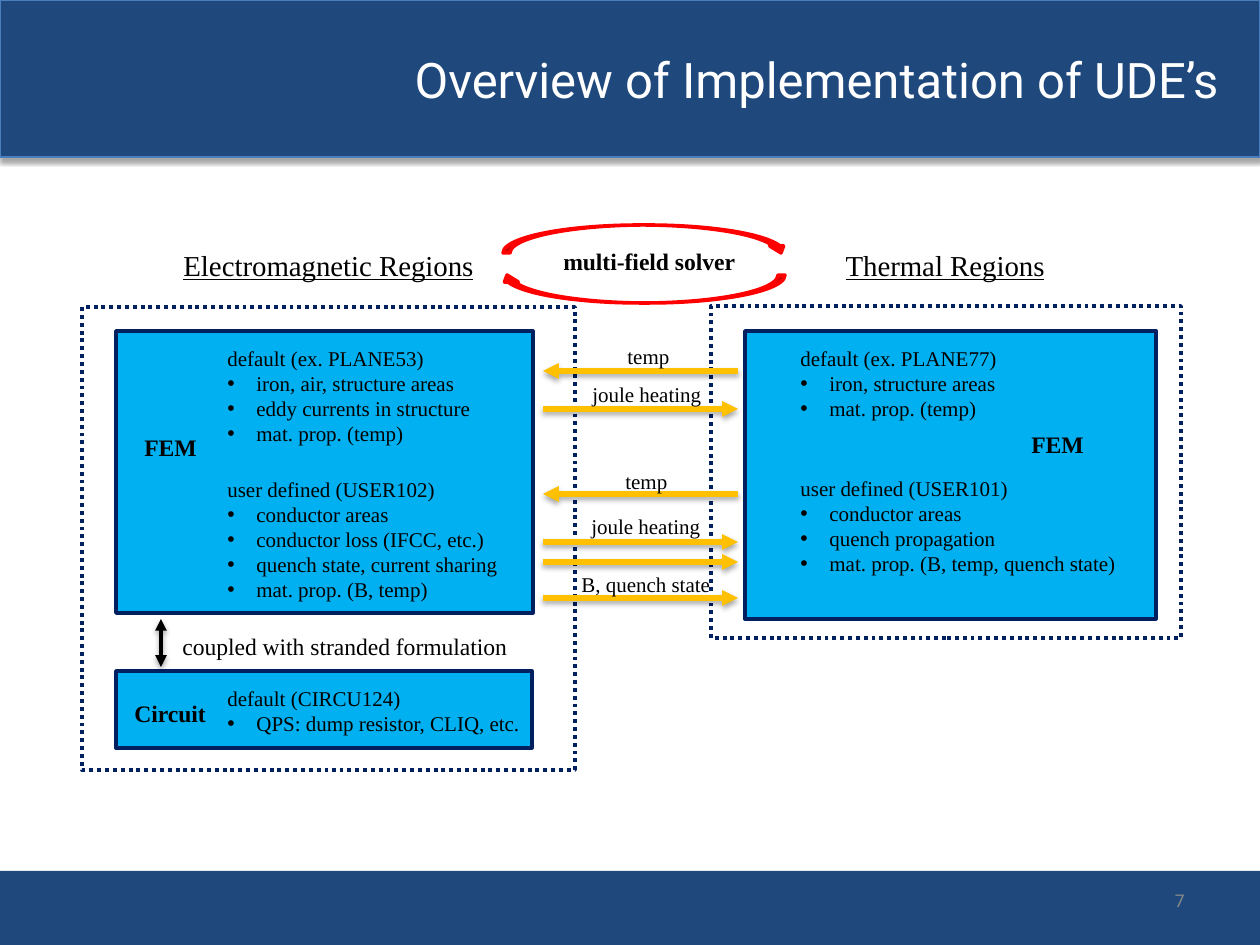
from dataclasses import dataclass

from lxml.etree import SubElement
from pptx import Presentation
from pptx.dml.color import RGBColor
from pptx.enum.dml import MSO_LINE
from pptx.enum.shapes import MSO_CONNECTOR, MSO_SHAPE
from pptx.enum.text import MSO_ANCHOR, PP_ALIGN
from pptx.oxml.ns import qn
from pptx.util import Emu, Pt


@dataclass(frozen=True)
class Theme:
    bar: str = "1F497D"
    bar_line: str = "4B7EBC"
    box: str = "00B0F0"
    frame: str = "002060"
    loop: str = "FF0000"
    flow: str = "FFC000"
    ink: str = "000000"
    white: str = "FFFFFF"
    muted: str = "898989"
    head_font: str = "Roboto"
    body_font: str = "Times New Roman"
    title: float = 28
    heading: float = 16.5
    label: float = 13.5
    body: float = 12
    number: float = 10


T = Theme()


def px(n):
    return Emu(round(n * 914400 / 126))


def rgb(color):
    return RGBColor.from_string(color)


def fill_shadow(effects):
    shadow = SubElement(effects, qn("a:outerShdw"), blurRad=str(Pt(3.1)),
                        dist=str(Pt(1.8)), dir="5400000", rotWithShape="0")
    color = SubElement(shadow, qn("a:srgbClr"), val=T.ink)
    SubElement(color, qn("a:alpha"), val="35000")


def add_shape(s, kind, box, fill=None, line=None, width=2, dash=None, shadow=False):
    sp = s.shapes.add_shape(kind, *map(px, box))
    sp.shadow.inherit = False
    if fill:
        sp.fill.solid()
        sp.fill.fore_color.rgb = rgb(fill)
    else:
        sp.fill.background()
    if line:
        sp.line.color.rgb = rgb(line)
        sp.line.width = Pt(width)
    else:
        sp.line.fill.background()
    if dash:
        sp.line.dash_style = dash
    if shadow:
        fill_shadow(sp._element.spPr.find(qn("a:effectLst")))
    return sp


def add_arrow(s, start, end, color, width, both=False):
    line = s.shapes.add_connector(MSO_CONNECTOR.STRAIGHT, *map(px, start + end))
    line.line.color.rgb = rgb(color)
    line.line.width = Pt(width)
    ln = line.line._get_or_add_ln()
    for tag in ("a:headEnd", "a:tailEnd") if both else ("a:tailEnd",):
        SubElement(ln, qn(tag), type="triangle")
    fill_shadow(SubElement(line._element.spPr, qn("a:effectLst")))


def add_bullet(p):
    pPr = p._p.get_or_add_pPr()
    pPr.set("marL", str(px(29)))
    pPr.set("indent", str(-px(29)))
    SubElement(pPr, qn("a:buFont"), typeface="Arial")
    SubElement(pPr, qn("a:buChar"), char="•")


def add_text(s, box, lines, size, color=T.ink, font=T.body_font, align=PP_ALIGN.LEFT,
             anchor=MSO_ANCHOR.TOP, wrap=False, bold=False, underline=False):
    tf = s.shapes.add_textbox(*map(px, box)).text_frame
    tf.word_wrap = wrap
    tf.vertical_anchor = anchor
    tf.text = "\n".join(lines)
    for i, p in enumerate(tf.paragraphs):
        p.alignment = align
        if i:
            add_bullet(p)
        for r in p.runs:
            r.font.size = Pt(size)
            r.font.name = font
            r.font.color.rgb = rgb(color)
            if bold:
                r.font.bold = True
            if underline:
                r.font.underline = True
    return tf


def add_heading(s, box, text):
    add_text(s, box, [text], T.heading, align=PP_ALIGN.CENTER, wrap=True, underline=True)


def add_label(s, box, text, bold=True):
    add_text(s, box, [text], T.label, bold=bold)


def add_block(s, box):
    add_shape(s, MSO_SHAPE.RECTANGLE, box, T.box, T.frame)


def add_frame(s, box):
    add_shape(s, MSO_SHAPE.RECTANGLE, box, None, T.frame, 2.25, MSO_LINE.ROUND_DOT)


def add_bars(s):
    add_shape(s, MSO_SHAPE.RECTANGLE, (0, 871, 1262, 76), T.bar)
    add_shape(s, MSO_SHAPE.RECTANGLE, (0, 0, 1260, 157), T.bar, T.bar_line, 0.75, shadow=True)
    tf = add_text(s, (373, 0, 887, 157), ["Overview of Implementation of UDE’s"], T.title,
                  T.white, T.head_font, PP_ALIGN.CENTER, MSO_ANCHOR.MIDDLE, True)
    fill = tf.paragraphs[0].runs[0]._r.rPr.find(qn("a:solidFill"))
    effects = SubElement(fill.getparent(), qn("a:effectLst"))
    fill.addnext(effects)
    fill_shadow(effects)
    add_text(s, (1125, 876, 72, 50), ["7"], T.number, T.muted, T.head_font,
             PP_ALIGN.RIGHT, MSO_ANCHOR.MIDDLE, True)


def add_electromagnetic(s):
    add_heading(s, (82, 241, 493, 48), "Electromagnetic Regions")
    add_block(s, (116, 331, 417, 282))
    add_text(s, (215, 339, 272, 115), [
        "default (ex. PLANE53)", "iron, air, structure areas",
        "eddy currents in structure", "mat. prop. (temp)"], T.body)
    add_text(s, (215, 470, 300, 140), [
        "user defined (USER102)", "conductor areas", "conductor loss (IFCC, etc.)",
        "quench state, current sharing", "mat. prop. (B, temp)"], T.body)
    add_label(s, (132, 427, 78, 42), "FEM")
    add_block(s, (116, 671, 416, 77))
    add_text(s, (215, 679, 321, 63),
             ["default (CIRCU124)", "QPS: dump resistor, CLIQ, etc."], T.body)
    add_label(s, (122, 693, 98, 42), "Circuit")
    add_arrow(s, (161, 619), (161, 667), T.ink, 2.25, both=True)
    add_label(s, (170, 626, 360, 42), "coupled with stranded formulation", bold=False)
    add_frame(s, (82, 307, 493, 463))


def add_thermal(s):
    add_block(s, (745, 331, 411, 288))
    add_text(s, (788, 339, 224, 89), [
        "default (ex. PLANE77)", "iron, structure areas", "mat. prop. (temp)"], T.body)
    add_label(s, (1019, 424, 78, 42), "FEM")
    add_text(s, (788, 469, 345, 115), [
        "user defined (USER101)", "conductor areas", "quench propagation",
        "mat. prop. (B, temp, quench state)"], T.body)
    add_heading(s, (709, 241, 472, 48), "Thermal Regions")
    add_frame(s, (711, 306, 470, 332))


def add_solver(s):
    add_label(s, (551, 241, 200, 42), "multi-field solver")
    for left, top, turn in ((503, 225, 0), (500, 275, 180)):
        sp = add_shape(s, MSO_SHAPE.CURVED_DOWN_ARROW, (left, top, 285, 28), T.loop, T.loop)
        sp.rotation = turn


def add_flows(s):
    left, right = 543, 738
    for y, to_left in ((371, True), (409, False), (494, True),
                       (542, False), (562, False), (598, False)):
        start, end = (right, left) if to_left else (left, right)
        add_arrow(s, (start, y), (end, y), T.flow, 3)
    for x, y, width, text in ((615, 337, 68, "temp"), (580, 375, 136, "joule heating"),
                              (613, 462, 68, "temp"), (579, 507, 136, "joule heating"),
                              (569, 565, 156, "B, quench state")):
        add_text(s, (x, y, width, 38), [text], T.body)


def main():
    prs = Presentation()
    prs.slide_width, prs.slide_height = px(1260), px(945)
    s = prs.slides.add_slide(prs.slide_layouts[6])
    add_bars(s)
    add_electromagnetic(s)
    add_thermal(s)
    add_solver(s)
    add_flows(s)
    prs.save("out.pptx")


if __name__ == "__main__":
    main()
